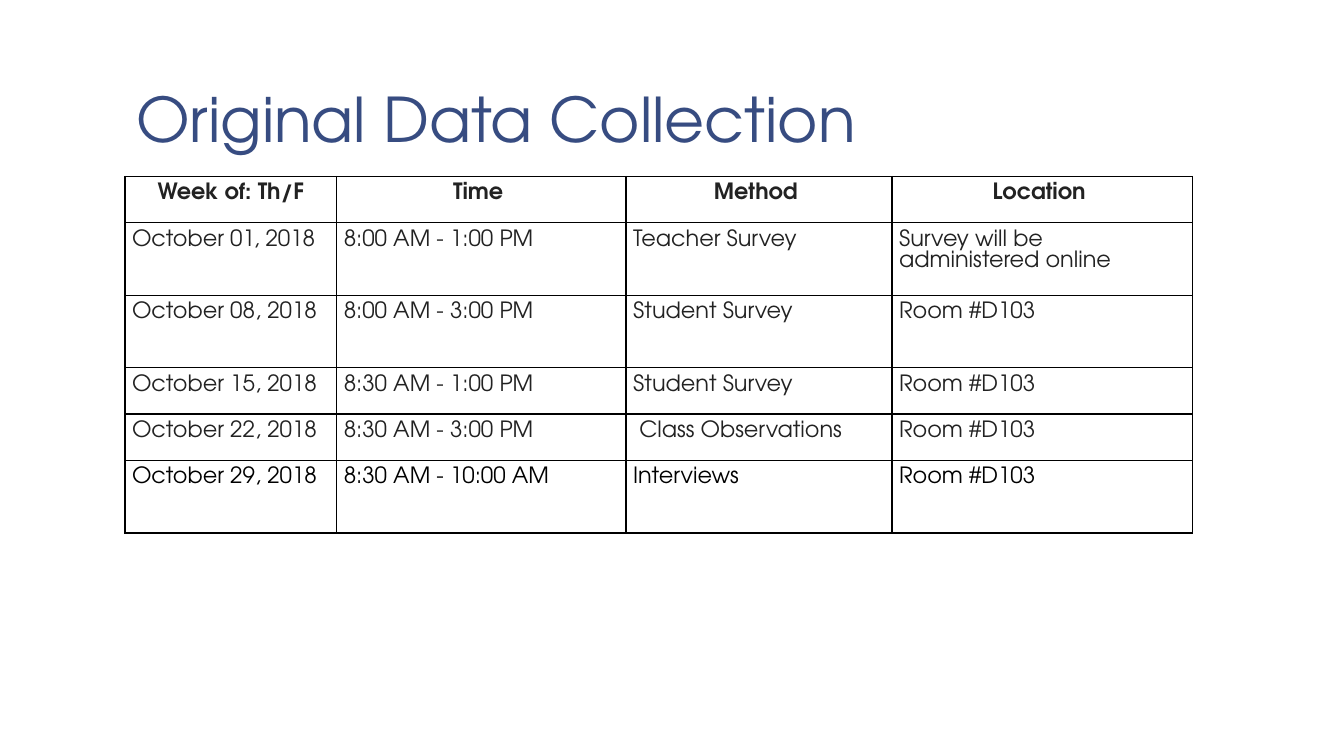
from dataclasses import dataclass

from lxml import etree
from pptx import Presentation
from pptx import util as u
from pptx.dml.color import RGBColor
from pptx.enum import text
from pptx.oxml import ns

FONT = "TeX Gyre Adventor"
TITLE_BLUE = RGBColor(0x37, 0x4C, 0x81)
CHARCOAL = RGBColor(0x22, 0x22, 0x22)
BLACK = RGBColor(0, 0, 0)
WHITE = RGBColor(0xFF, 0xFF, 0xFF)

SLIDE_WIDTH = u.Inches(13.33)
SLIDE_HEIGHT = u.Inches(7.5)
GRID_COUNT = 100
COLUMN_SPANS = (15.75, 21.53, 19.8, 22.35)
SHORT_ROW, TALL_ROW = 6.13, 9.6
HEADINGS = ("Week of: Th/F", "Time ", "Method ", "Location ")


@dataclass(frozen=True)
class Session:
    date: str
    time: str
    method: str
    location: str = "Room #D103"
    height: float = SHORT_ROW
    color: RGBColor = CHARCOAL

    @property
    def cells(self) -> tuple[str, ...]:
        return self.date, self.time, self.method, self.location


SESSIONS = (
    Session("October 01, 2018", "8:00 AM - 1:00 PM", "Teacher Survey",
            "Survey will be administered online", height=TALL_ROW),
    Session("October 08, 2018", "8:00 AM - 3:00 PM", "Student Survey", height=TALL_ROW),
    Session("October 15, 2018", "8:30 AM - 1:00 PM", "Student Survey"),
    Session("October 22, 2018", "8:30 AM - 3:00 PM", " Class Observations"),
    Session("October 29, 2018", "8:30 AM - 10:00 AM", "Interviews",
            height=TALL_ROW, color=BLACK),
)


def columns(count: float) -> u.Emu:
    return u.Emu(round(SLIDE_WIDTH * count / GRID_COUNT))


def rows(count: float) -> u.Emu:
    return u.Emu(round(SLIDE_HEIGHT * count / GRID_COUNT))


def write(frame, content: str, *, size: float, color: RGBColor, bold: bool = False,
          align=text.PP_ALIGN.LEFT, spacing: float = 1.0) -> None:
    paragraph = frame.paragraphs[0]
    paragraph.alignment = align
    paragraph.line_spacing = spacing
    run = paragraph.add_run()
    run.text = content
    run.font.name = FONT
    run.font.size = u.Pt(size)
    run.font.bold = bold
    run.font.color.rgb = color


def add_borders(cell, color: RGBColor, width: float) -> None:
    properties = cell._tc.get_or_add_tcPr()
    for position, side in enumerate(("lnL", "lnR", "lnT", "lnB")):
        line = etree.Element(ns.qn(f"a:{side}"), w=str(u.Pt(width)))
        fill = etree.SubElement(line, ns.qn("a:solidFill"))
        etree.SubElement(fill, ns.qn("a:srgbClr"), val=str(color))
        properties.insert(position, line)


def add_title(slide) -> None:
    title = slide.shapes.title
    title.left, title.top = columns(9.15), rows(1.07)
    title.width, title.height = columns(83.33), rows(20.4)
    frame = title.text_frame
    frame.margin_left = frame.margin_right = columns(0.98)
    frame.margin_top = frame.margin_bottom = rows(0.93)
    frame.vertical_anchor = text.MSO_ANCHOR.BOTTOM
    frame.auto_size = text.MSO_AUTO_SIZE.NONE
    frame.word_wrap = True
    write(frame, "Original Data Collection", size=44, color=TITLE_BLUE, spacing=0.85)


def add_schedule(slide) -> None:
    heights = (SHORT_ROW, *(session.height for session in SESSIONS))
    table = slide.shapes.add_table(
        len(heights), len(COLUMN_SPANS), columns(9.3), rows(23.33),
        columns(sum(COLUMN_SPANS)), rows(sum(heights))).table
    table.first_row = table.horz_banding = False
    for column, span in zip(table.columns, COLUMN_SPANS):
        column.width = columns(span)
    for row, height in zip(table.rows, heights):
        row.height = rows(height)
    for cell in table.iter_cells():
        cell.margin_left = cell.margin_right = columns(0.53)
        cell.margin_top = cell.margin_bottom = rows(0.93)
        cell.fill.background()
        add_borders(cell, BLACK, 1)
    for column, heading in enumerate(HEADINGS):
        write(table.cell(0, column).text_frame, heading, size=16, color=CHARCOAL,
              bold=True, align=text.PP_ALIGN.CENTER)
    for row, session in enumerate(SESSIONS, start=1):
        for column, content in enumerate(session.cells):
            write(table.cell(row, column).text_frame, content, size=16, color=session.color)


def main() -> None:
    """Build the data collection schedule slide."""
    presentation = Presentation()
    presentation.slide_width, presentation.slide_height = SLIDE_WIDTH, SLIDE_HEIGHT
    slide = presentation.slides.add_slide(presentation.slide_layouts.get_by_name("Title Only"))
    slide.background.fill.solid()
    slide.background.fill.fore_color.rgb = WHITE
    add_title(slide)
    add_schedule(slide)
    presentation.save("out.pptx")


if __name__ == "__main__":
    main()
